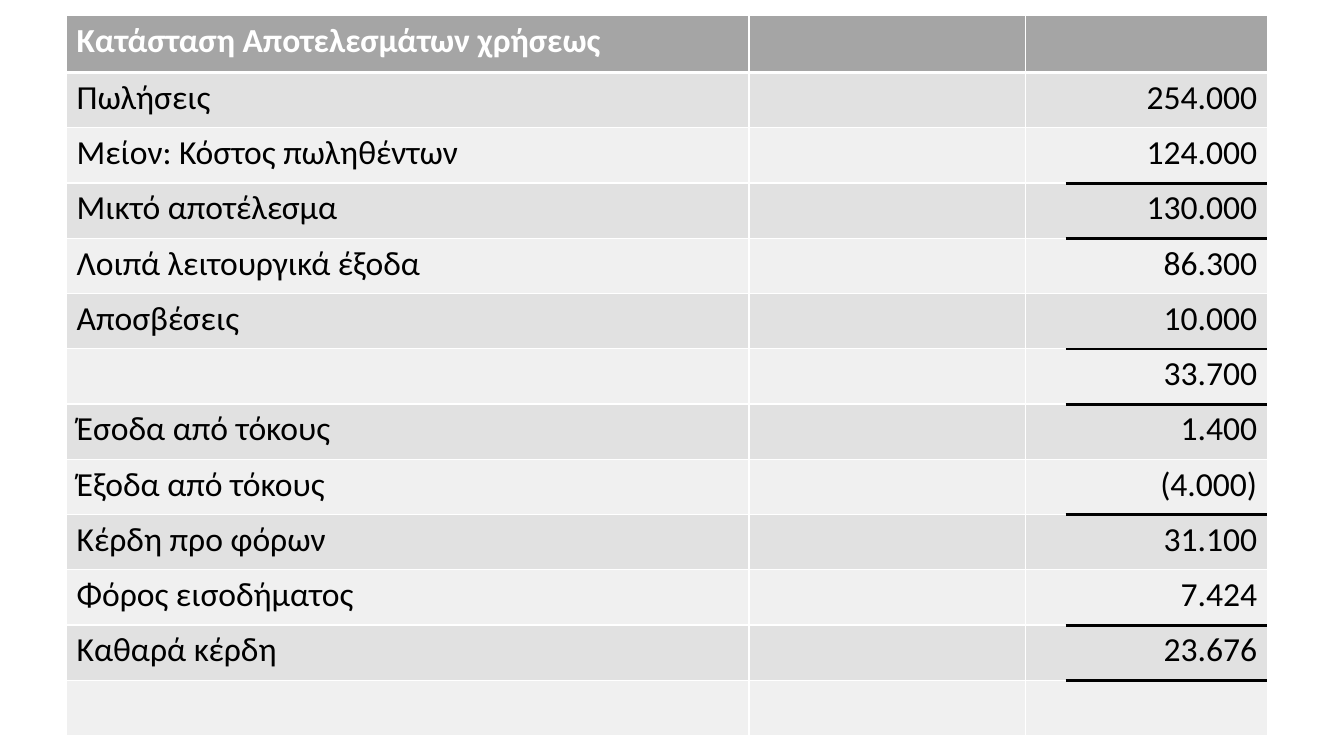
import pptx
import pptx.dml.color
import pptx.enum.shapes
import pptx.enum.text
import pptx.oxml
import pptx.oxml.ns
import pptx.util
from dataclasses import dataclass
from pptx.util import Inches


@dataclass(frozen=True)
class Theme:
    font: str = "Calibri"
    size: int = 24
    header_fill: str = "A5A5A5"
    odd_fill: str = "E1E1E1"
    even_fill: str = "F0F0F0"
    white: str = "FFFFFF"
    black: str = "000000"
    grid_width: float = 1
    header_rule_width: float = 3
    total_rule_width: float = 2


@dataclass(frozen=True)
class Box:
    left: float
    top: float
    width: float
    height: float


THEME = Theme()
COLUMN_WIDTHS = (6.77, 2.74, 2.4)
HEADER_HEIGHT = 0.57
RULE_LENGTH = 2

# Label, amount, and whether a rule is drawn below the amount
STATEMENT = (
    ("Πωλήσεις", "254.000", False),
    ("Μείον: Κόστος πωληθέντων", "124.000", True),
    ("Μικτό αποτέλεσμα", "130.000", True),
    ("Λοιπά λειτουργικά έξοδα", "86.300", False),
    ("Αποσβέσεις", "10.000", True),
    ("", "33.700", True),
    ("Έσοδα από τόκους", "1.400", False),
    ("Έξοδα από τόκους", "(4.000)", True),
    ("Κέρδη προ φόρων", "31.100", False),
    ("Φόρος εισοδήματος", "7.424", True),
    ("Καθαρά κέρδη", "23.676", True),
    ("", "", False),
)


def color(value):
    return pptx.dml.color.RGBColor.from_string(value)


def set_borders(cell, top_width, bottom_width):
    properties = cell._tc.get_or_add_tcPr()
    widths = {"L": THEME.grid_width, "R": THEME.grid_width,
              "T": top_width, "B": bottom_width}
    for side, width in widths.items():
        properties.append(pptx.oxml.parse_xml(
            f'<a:ln{side} {pptx.oxml.ns.nsdecls("a")} w="{pptx.util.Pt(width)}">'
            f'<a:solidFill><a:srgbClr val="{THEME.white}"/></a:solidFill>'
            f'</a:ln{side}>'))


def write_cell(cell, text, text_color, bold, align_right):
    if not text:
        return
    paragraph = cell.text_frame.paragraphs[0]
    if align_right:
        paragraph.alignment = pptx.enum.text.PP_ALIGN.RIGHT
    run = paragraph.add_run()
    run.text = text
    run.font.name = THEME.font
    run.font.size = pptx.util.Pt(THEME.size)
    run.font.bold = bold
    run.font.color.rgb = color(text_color)


def add_statement_table(slide, box, title):
    rows = [(title, "", "")] + [(label, "", amount) for label, amount, _ in STATEMENT]
    table = slide.shapes.add_table(
        len(rows), len(COLUMN_WIDTHS), Inches(box.left), Inches(box.top),
        Inches(box.width), Inches(box.height)).table
    for column, width in zip(table.columns, COLUMN_WIDTHS):
        column.width = Inches(width)

    row_height = (box.height - HEADER_HEIGHT) / len(STATEMENT)
    for row_index, texts in enumerate(rows):
        header = row_index == 0
        table.rows[row_index].height = Inches(HEADER_HEIGHT if header else row_height)
        band = THEME.odd_fill if row_index % 2 else THEME.even_fill
        for column_index, text in enumerate(texts):
            cell = table.cell(row_index, column_index)
            set_borders(
                cell,
                THEME.header_rule_width if row_index == 1 else THEME.grid_width,
                THEME.header_rule_width if header else THEME.grid_width)
            cell.fill.solid()
            cell.fill.fore_color.rgb = color(THEME.header_fill if header else band)
            write_cell(cell, text, THEME.white if header else THEME.black,
                       header, column_index == 2)


def add_total_rules(slide, box):
    row_height = (box.height - HEADER_HEIGHT) / len(STATEMENT)
    right = box.left + box.width
    for row_number, (_, _, ruled) in enumerate(STATEMENT, start=1):
        if not ruled:
            continue
        y = Inches(box.top + HEADER_HEIGHT + row_number * row_height)
        rule = slide.shapes.add_connector(
            pptx.enum.shapes.MSO_CONNECTOR.STRAIGHT,
            Inches(right - RULE_LENGTH), y, Inches(right), y)
        rule.line.color.rgb = color(THEME.black)
        rule.line.width = pptx.util.Pt(THEME.total_rule_width)
        rule._element.spPr.append(pptx.oxml.parse_xml(
            f'<a:effectLst {pptx.oxml.ns.nsdecls("a")}/>'))


def build_statement_slide(presentation):
    slide = presentation.slides.add_slide(presentation.slide_layouts[6])
    box = Box(0.66, 0.15, sum(COLUMN_WIDTHS), 7.15)
    add_statement_table(slide, box, "Κατάσταση Αποτελεσμάτων χρήσεως")
    add_total_rules(slide, box)


def main():
    presentation = pptx.Presentation()
    presentation.slide_width = Inches(13.33)
    presentation.slide_height = Inches(7.5)
    build_statement_slide(presentation)
    presentation.save("out.pptx")


if __name__ == "__main__":
    main()
